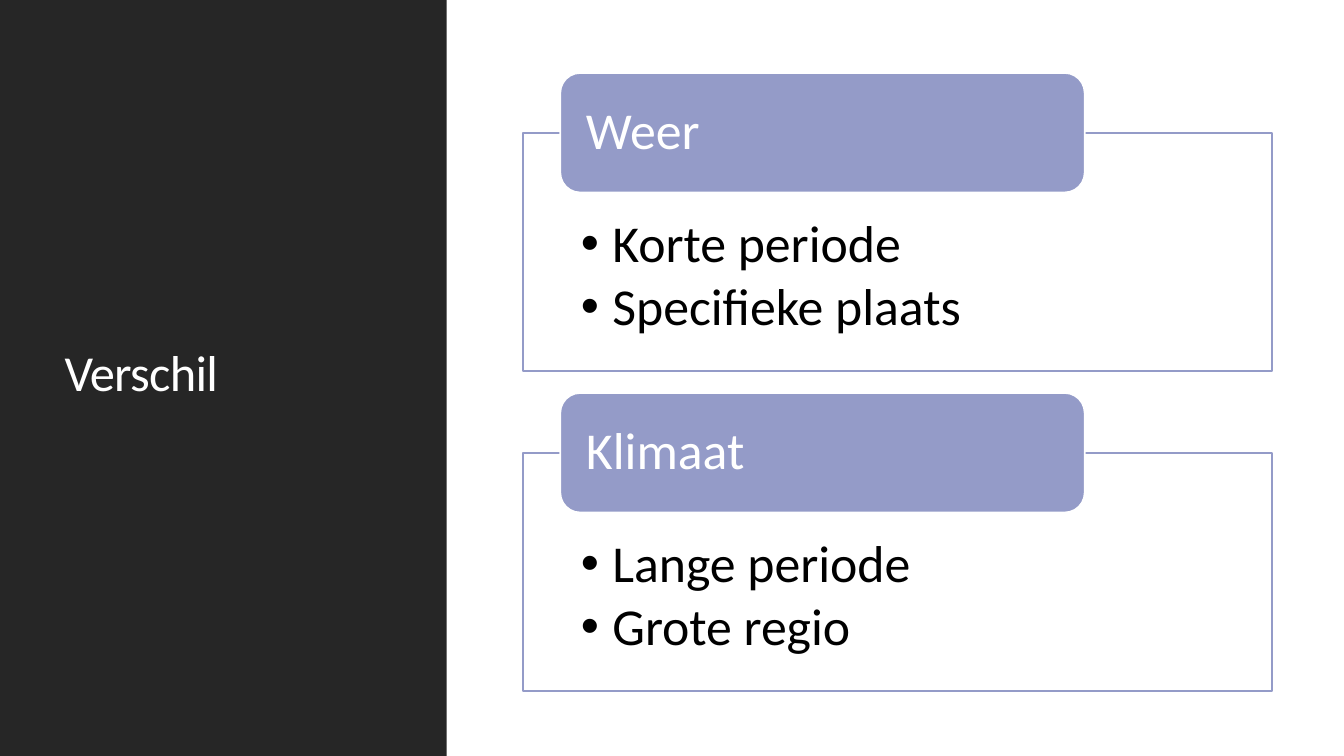
from dataclasses import dataclass

from lxml import etree
from pptx import Presentation
from pptx.dml.color import RGBColor
from pptx.enum.shapes import MSO_SHAPE
from pptx.enum.text import MSO_ANCHOR, MSO_AUTO_SIZE, PP_ALIGN
from pptx.oxml.ns import qn
from pptx.util import Pt

RECT, ROUNDED = MSO_SHAPE.RECTANGLE, MSO_SHAPE.ROUNDED_RECTANGLE
TOP, MIDDLE = MSO_ANCHOR.TOP, MSO_ANCHOR.MIDDLE
LEFT = PP_ALIGN.LEFT
NO_AUTOFIT = MSO_AUTO_SIZE.NONE


@dataclass(frozen=True)
class Theme:
    font: str = "Calibri"
    dark: RGBColor = RGBColor(0x26, 0x26, 0x26)
    accent: RGBColor = RGBColor(0x94, 0x9B, 0xC8)
    white: RGBColor = RGBColor(0xFF, 0xFF, 0xFF)
    black: RGBColor = RGBColor(0, 0, 0)
    title_size: float = 36
    body_size: float = 37
    line_width: float = 1.25


@dataclass(frozen=True)
class Box:
    left: float
    top: float
    width: float
    height: float

    def lengths(self) -> list:
        return [Pt(v) for v in (self.left, self.top, self.width, self.height)]


@dataclass(frozen=True)
class Topic:
    heading: str
    points: tuple[str, ...]


THEME = Theme()
TOPICS = (
    Topic("Weer", ("Korte periode", "Specifieke plaats")),
    Topic("Klimaat", ("Lange periode", "Grote regio")),
)
SLIDE_W, SLIDE_H = 960, 540
PANEL = Box(0, 0, 319, SLIDE_H)
TITLE = Box(38.9, 41, 242.6, 454.3)
FIRST_FRAME = Box(373.4, 94.8, 535.2, 170.2)
TOPIC_PITCH = 228.6
LABEL_INDENT, LABEL_W, LABEL_H = 26.8, 374.6, 85.4
FRAME_INSETS = (41.5, 60.5, 41.5, 20.6)
LABEL_INSETS = (14.2, 0, 14.2, 0)
BULLET_INDENT = 22.5


def add_block(s, kind, box: Box, fill: RGBColor, line: RGBColor | None = None):
    sp = s.shapes.add_shape(kind, *box.lengths())
    sp.shadow.inherit = False
    sp.fill.solid()
    sp.fill.fore_color.rgb = fill
    if line is None:
        sp.line.fill.background()
    else:
        sp.line.color.rgb = line
        sp.line.width = Pt(THEME.line_width)
    return sp


def add_bullet(p) -> None:
    pPr = p._p.get_or_add_pPr()
    pPr.set("marL", str(Pt(BULLET_INDENT)))
    pPr.set("indent", str(-Pt(BULLET_INDENT)))
    etree.SubElement(pPr, qn("a:buFont")).set("typeface", "Arial")
    etree.SubElement(pPr, qn("a:buChar")).set("char", "•")


def write(sp, lines: tuple[str, ...], size: float, color: RGBColor, anchor,
          insets: tuple[float, ...] = (7.2, 3.6, 7.2, 3.6),
          space_after: float = 0, bulleted: bool = False) -> None:
    tf = sp.text_frame
    sides = ("margin_left", "margin_top", "margin_right", "margin_bottom")
    frame_format = {"word_wrap": True, "auto_size": NO_AUTOFIT,
                    "vertical_anchor": anchor}
    frame_format.update(zip(sides, map(Pt, insets)))
    for name, value in frame_format.items():
        setattr(tf, name, value)
    paragraph_format = {"alignment": LEFT, "line_spacing": 0.9,
                        "space_before": Pt(0), "space_after": Pt(space_after)}
    font_format = {"name": THEME.font, "size": Pt(size)}
    for i, text in enumerate(lines):
        p = tf.add_paragraph() if i else tf.paragraphs[0]
        for name, value in paragraph_format.items():
            setattr(p, name, value)
        if bulleted:
            add_bullet(p)
        r = p.add_run()
        r.text = text
        for name, value in font_format.items():
            setattr(r.font, name, value)
        r.font.color.rgb = color


def add_title(s, text: str) -> None:
    """Fill the title placeholder and put the dark panel behind it."""
    title = s.shapes.title
    title.left, title.top, title.width, title.height = TITLE.lengths()
    write(title, (text,), THEME.title_size, THEME.white, MIDDLE)
    r = title.text_frame.paragraphs[0].runs[0]
    r.font._element.set("spc", "-50")
    panel = add_block(s, RECT, PANEL, THEME.dark)
    title.element.addprevious(panel.element)


def add_topic(s, topic: Topic, index: int) -> None:
    """Draw a framed list with its label centred on the top edge."""
    top = FIRST_FRAME.top + index * TOPIC_PITCH
    frame_box = Box(FIRST_FRAME.left, top, FIRST_FRAME.width, FIRST_FRAME.height)
    label_box = Box(FIRST_FRAME.left + LABEL_INDENT, top - LABEL_H / 2,
                    LABEL_W, LABEL_H)
    frame = add_block(s, RECT, frame_box, THEME.white, THEME.accent)
    write(frame, topic.points, THEME.body_size, THEME.black, TOP,
          FRAME_INSETS, space_after=5.5, bulleted=True)
    label = add_block(s, ROUNDED, label_box, THEME.accent, THEME.white)
    write(label, (topic.heading,), THEME.body_size, THEME.white, MIDDLE,
          LABEL_INSETS)


def main() -> None:
    prs = Presentation()
    prs.slide_width, prs.slide_height = Pt(SLIDE_W), Pt(SLIDE_H)
    s = prs.slides.add_slide(prs.slide_layouts.get_by_name("Title Only"))
    add_title(s, "Verschil")
    for index, topic in enumerate(TOPICS):
        add_topic(s, topic, index)
    prs.save("out.pptx")


if __name__ == "__main__":
    main()
